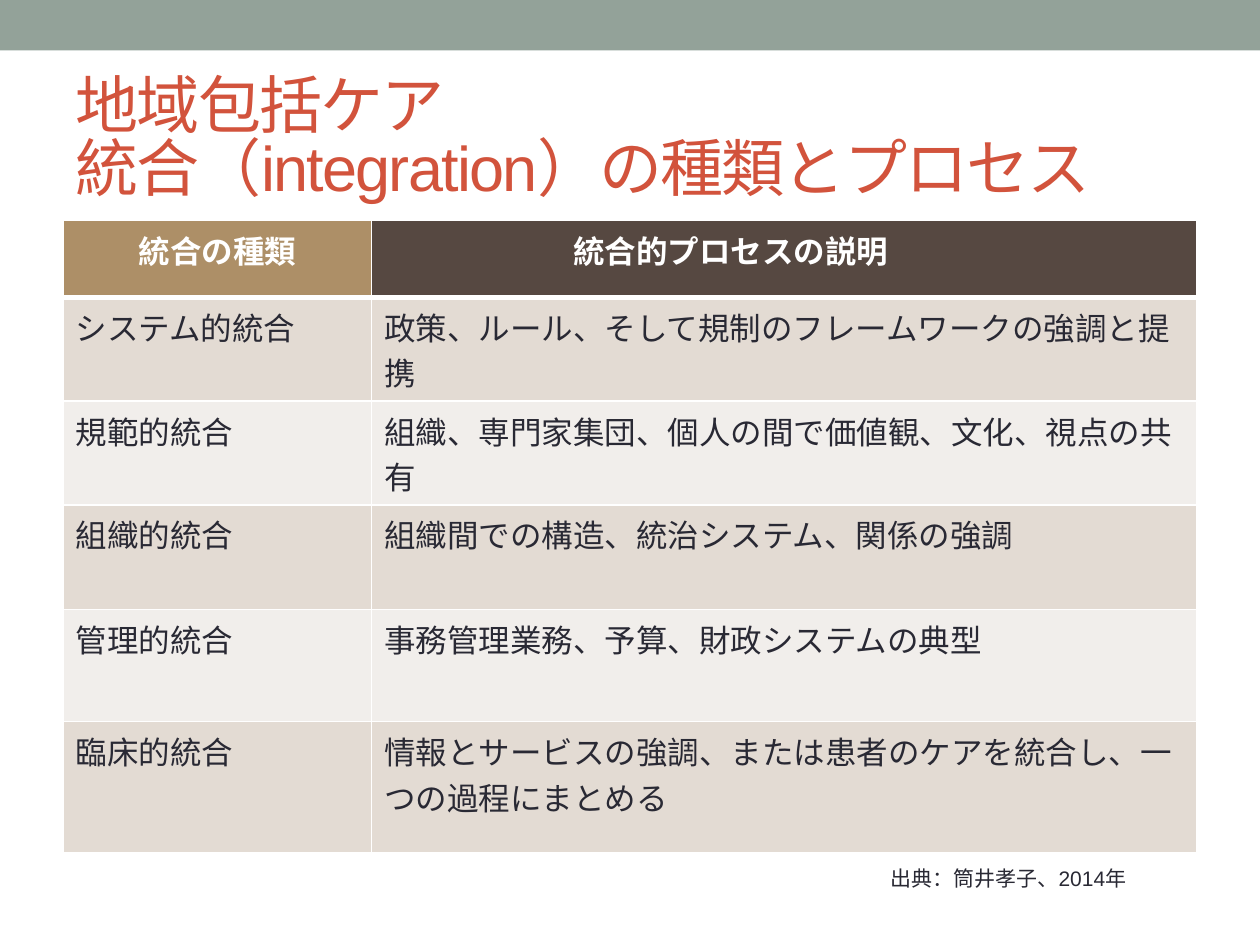
from lxml import etree
from pptx import Presentation
from pptx.dml.color import RGBColor
from pptx.enum.shapes import MSO_SHAPE
from pptx.enum.text import MSO_ANCHOR, MSO_AUTO_SIZE, PP_ALIGN
from pptx.oxml.ns import qn
from pptx.util import Inches, Pt

RECTANGLE = MSO_SHAPE.RECTANGLE
MIDDLE = MSO_ANCHOR.MIDDLE
LEFT = PP_ALIGN.LEFT
NO_AUTOFIT = MSO_AUTO_SIZE.NONE
GROW_SHAPE = MSO_AUTO_SIZE.SHAPE_TO_FIT_TEXT
TITLE_ONLY_LAYOUT = 5

FONT = "Arial"
COLORS = {
    "band": "93A299",
    "title": "D2533C",
    "text": "292934",
    "white": "FFFFFF",
    "type_header": "AD8F67",
    "process_header": "564841",
    "odd_row": "E3DBD3",
    "even_row": "F1EEEB",
}

TITLE_LINES = ["地域包括ケア", "統合（integration）の種類とプロセス"]
# Header text, fill and left margin
HEADERS = [
    ("統合の種類", "type_header", 0.6),
    ("統合的プロセスの説明", "process_header", 1.6),
]
INTEGRATION_TYPES = [
    ("システム的統合", "政策、ルール、そして規制のフレームワークの強調と提携"),
    ("規範的統合", "組織、専門家集団、個人の間で価値観、文化、視点の共有"),
    ("組織的統合", "組織間での構造、統治システム、関係の強調"),
    ("管理的統合", "事務管理業務、予算、財政システムの典型"),
    ("臨床的統合", "情報とサービスの強調、または患者のケアを統合し、一つの過程にまとめる"),
]
COLUMN_WIDTHS = [2.45, 6.55]
ROW_HEIGHTS = [0.61, 0.81, 0.76, 0.83, 0.89, 1.04]


def color(name):
    return RGBColor.from_string(COLORS[name])


def add_run(paragraph, text, size, color_name, bold=False):
    run = paragraph.add_run()
    run.text = text
    run.font.name = FONT
    run.font.size = Pt(size)
    run.font.bold = bold
    run.font.color.rgb = color(color_name)
    return run


def add_band(slide):
    band = slide.shapes.add_shape(RECTANGLE, 0, 0, Inches(10), Inches(0.4))
    band.shadow.inherit = False
    band.fill.solid()
    band.fill.fore_color.rgb = color("band")
    band.line.fill.background()


def fill_title(slide):
    title = slide.shapes.title
    title.left, title.top = Inches(0.5), Inches(0.58)
    title.width, title.height = Inches(9), Inches(1.08)
    frame = title.text_frame
    frame.auto_size = NO_AUTOFIT
    frame.vertical_anchor = MIDDLE
    paragraph = frame.paragraphs[0]
    paragraph.alignment = LEFT
    paragraph.line_spacing = 0.83
    for index, line in enumerate(TITLE_LINES):
        if index:
            paragraph.add_line_break()
        run = add_run(paragraph, line, 36, "title")
        run.font._element.set("spc", "-100")


def add_borders(cell, bottom_width):
    properties = cell._tc.get_or_add_tcPr()
    widths = {"a:lnL": 1, "a:lnR": 1, "a:lnT": 1, "a:lnB": bottom_width}
    for tag, width in widths.items():
        line = etree.SubElement(properties, qn(tag), w=str(Pt(width)))
        fill = etree.SubElement(line, qn("a:solidFill"))
        etree.SubElement(fill, qn("a:srgbClr"), val=COLORS["white"])


def fill_cell(cell, text, fill_name, text_color, bold=False,
              margin_left=0.1, bottom_width=1):
    add_borders(cell, bottom_width)
    cell.fill.solid()
    cell.fill.fore_color.rgb = color(fill_name)
    cell.margin_left = Inches(margin_left)
    add_run(cell.text_frame.paragraphs[0], text, 18, text_color, bold)


def add_integration_table(slide):
    table = slide.shapes.add_table(
        len(ROW_HEIGHTS), len(COLUMN_WIDTHS), Inches(0.5), Inches(1.75),
        Inches(sum(COLUMN_WIDTHS)), Inches(sum(ROW_HEIGHTS))).table
    for column, width in zip(table.columns, COLUMN_WIDTHS):
        column.width = Inches(width)
    for row, height in zip(table.rows, ROW_HEIGHTS):
        row.height = Inches(height)

    # Header row
    for column, (text, fill_name, margin) in enumerate(HEADERS):
        fill_cell(table.cell(0, column), text, fill_name, "white",
                  bold=True, margin_left=margin, bottom_width=3)

    # Body rows in alternating colours
    for row, texts in enumerate(INTEGRATION_TYPES, start=1):
        fill_name = "odd_row" if row % 2 else "even_row"
        for column, text in enumerate(texts):
            fill_cell(table.cell(row, column), text, fill_name, "text")


def add_citation(slide):
    box = slide.shapes.add_textbox(
        Inches(6.97), Inches(6.82), Inches(2.36), Inches(0.3))
    frame = box.text_frame
    frame.word_wrap = True
    frame.auto_size = GROW_SHAPE
    add_run(frame.paragraphs[0], "出典：筒井孝子、2014年", 12, "text")


def main():
    presentation = Presentation()
    presentation.slide_width = Inches(10)
    presentation.slide_height = Inches(7.5)
    layout = presentation.slide_layouts[TITLE_ONLY_LAYOUT]
    slide = presentation.slides.add_slide(layout)
    add_band(slide)
    fill_title(slide)
    add_integration_table(slide)
    add_citation(slide)
    presentation.save("out.pptx")


if __name__ == "__main__":
    main()
